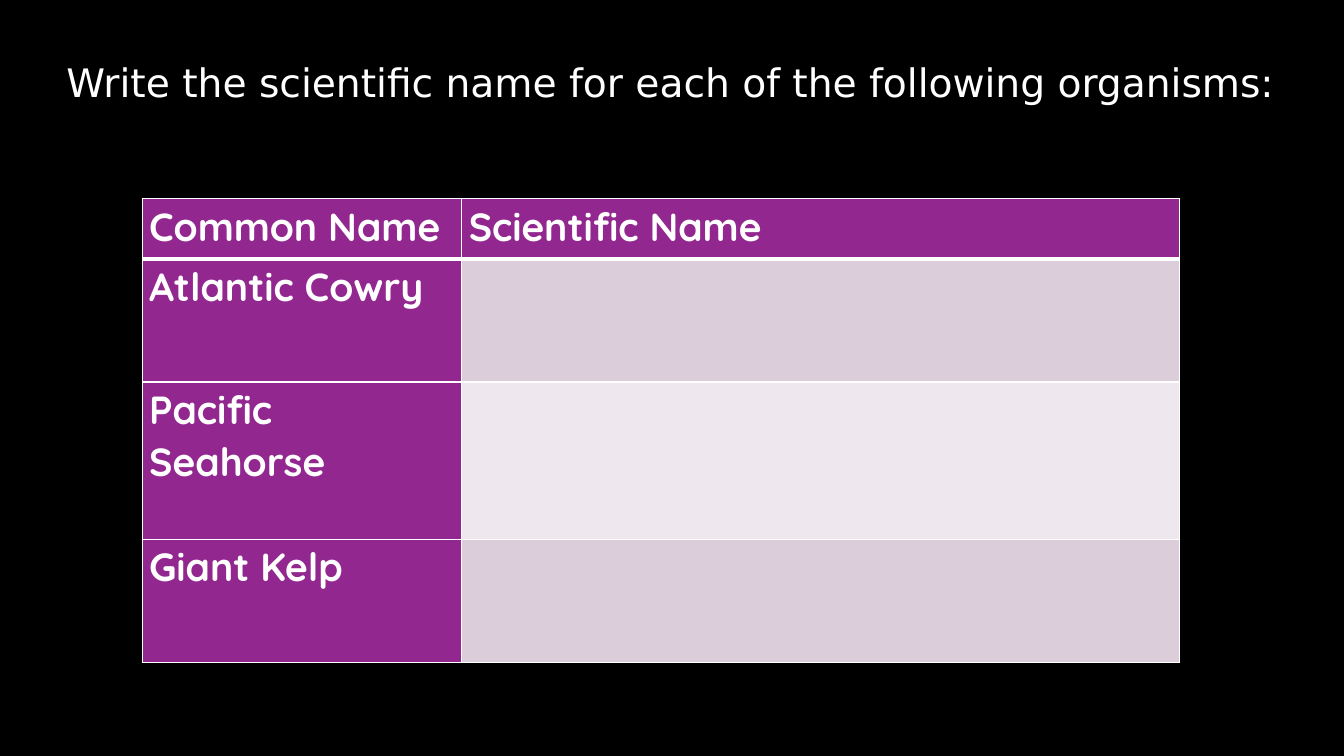
from pptx import Presentation
from pptx.dml.color import RGBColor
from pptx.enum.text import MSO_ANCHOR, PP_ALIGN
from pptx.oxml.ns import qn
from pptx.util import Inches, Pt
from lxml import etree

TOP = MSO_ANCHOR.TOP
LEFT = PP_ALIGN.LEFT

BLACK, WHITE, PURPLE = "000000", "FFFFFF", "92278F"
BANDS = ["DCCDDB", "EEE8EE"]


def color(code):
    return RGBColor.from_string(code)


class Deck:
    size = 28

    def __init__(self, wide, high):
        self.prs = Presentation()
        self.prs.slide_width = Inches(wide)
        self.prs.slide_height = Inches(high)
        self.slide = self.prs.slides.add_slide(self.prs.slide_layouts[6])
        fill = self.slide.background.fill
        fill.solid()
        fill.fore_color.rgb = color(BLACK)

    def label(self, frame, text, face, bold=False, space=1.0):
        frame.text = text
        frame.word_wrap = True
        para = frame.paragraphs[0]
        para.alignment = LEFT
        para.line_spacing = space
        for run in para.runs:
            font = run.font
            font.name, font.size, font.bold = face, Pt(self.size), bold
            font.color.rgb = color(WHITE)

    def title(self, box, text):
        frame = self.slide.shapes.add_textbox(*map(Inches, box)).text_frame
        frame.vertical_anchor = TOP
        frame.margin_left = frame.margin_right = Inches(0.5)
        frame.margin_top = frame.margin_bottom = Inches(0.48)
        self.label(frame, text, "DejaVu Sans")

    def border(self, cell, widths):
        props = cell._tc.get_or_add_tcPr()
        for side, width in zip("LRTB", widths):
            line = etree.SubElement(props, qn("a:ln" + side), w=str(Pt(width)))
            fill = etree.SubElement(line, qn("a:solidFill"))
            etree.SubElement(fill, qn("a:srgbClr"), val=WHITE)

    def cell(self, cell, text, fill, widths):
        cell.margin_left = cell.margin_right = Inches(0.07)
        cell.margin_top = cell.margin_bottom = 0
        cell.vertical_anchor = TOP
        self.border(cell, widths)
        cell.fill.solid()
        cell.fill.fore_color.rgb = color(fill)
        self.label(cell.text_frame, text, "Quicksand", True, 1.07)

    def table(self, left, top, cols, rows, data):
        box = map(Inches, (left, top, sum(cols), sum(rows)))
        grid = self.slide.shapes.add_table(len(rows), len(cols), *box).table
        for col, width in zip(grid.columns, cols):
            col.width = Inches(width)
        for r, (high, texts) in enumerate(zip(rows, data)):
            grid.rows[r].height = Inches(high)
            # A thick rule parts the header from the body
            widths = (1, 1, 3 if r == 1 else 1, 3 if r == 0 else 1)
            for c, text in enumerate(texts):
                head = r == 0 or c == 0
                fill = PURPLE if head else BANDS[(r - 1) % 2]
                self.cell(grid.cell(r, c), text, fill, widths)


def main():
    deck = Deck(13.33, 7.5)

    # Table of organisms, with room for the answers
    names = ["Atlantic Cowry", "Pacific Seahorse", "Giant Kelp"]
    data = [("Common Name", "Scientific Name")] + [(n, "") for n in names]
    deck.table(1.41, 1.97, [3.17, 7.12], [0.6, 1.22, 1.56, 1.22], data)

    # Question
    deck.title((0.16, 0.34, 13.33, 1.99),
               "Write the scientific name for each of the following organisms:")

    deck.prs.save("out.pptx")


if __name__ == "__main__":
    main()
